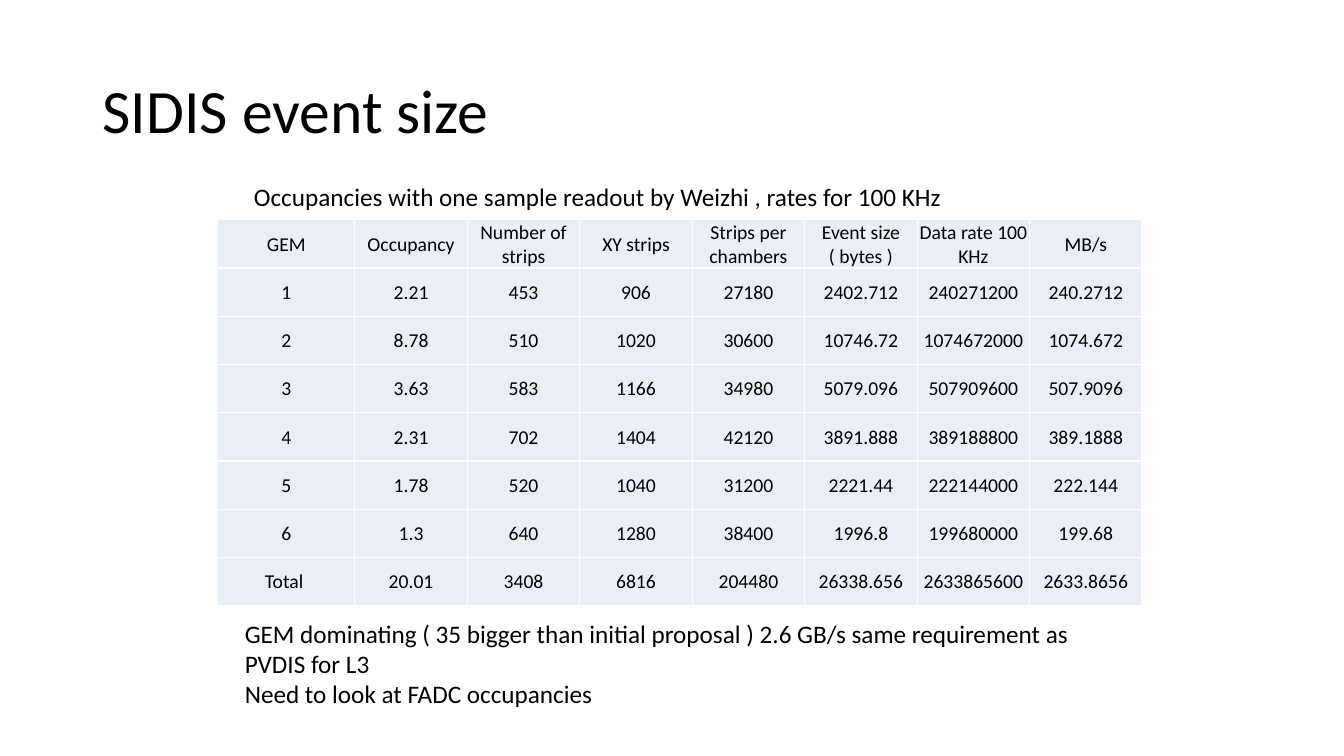
"""Builds the SIDIS event size slide with its GEM occupancy table."""
from lxml import etree
from pptx import Presentation, util as u
from pptx.dml.color import RGBColor
from pptx.enum import text
from pptx.oxml import ns

TITLE = "SIDIS event size"
CAPTION = "Occupancies with one sample readout by Weizhi , rates for 100 KHz"
CONCLUSIONS = [
    "GEM dominating ( 35 bigger than initial proposal ) 2.6 GB/s same requirement as PVDIS for L3",
    "Need to look at FADC occupancies",
]
GEM_ROWS = [
    ("GEM", "Occupancy", "Number of strips", "XY strips", "Strips per chambers",
     "Event size ( bytes )", "Data rate 100 KHz", "MB/s"),
    ("1", "2.21", "453", "906", "27180", "2402.712", "240271200", "240.2712"),
    ("2", "8.78", "510", "1020", "30600", "10746.72", "1074672000", "1074.672"),
    ("3", "3.63", "583", "1166", "34980", "5079.096", "507909600", "507.9096"),
    ("4", "2.31", "702", "1404", "42120", "3891.888", "389188800", "389.1888"),
    ("5", "1.78", "520", "1040", "31200", "2221.44", "222144000", "222.144"),
    ("6", "1.3", "640", "1280", "38400", "1996.8", "199680000", "199.68"),
    ("Total ", "20.01", "3408", "6816", "204480", "26338.656", "2633865600", "2633.8656"),
]

PX = u.Inches(1) // 100
SLIDE_SIZE = (1333, 750)
TITLE_BOX = (92, 40, 1150, 145)
CAPTION_BOX = (242, 175, 704, 40)
CONCLUSIONS_BOX = (233, 608, 900, 101)
TABLE_BOX = (216, 218, 917, 383)
GEM_WIDTH = 136
FONT = "Calibri"
BLACK = RGBColor(0x00, 0x00, 0x00)
WHITE = RGBColor(0xFF, 0xFF, 0xFF)
PALE_BLUE = RGBColor(0xEA, 0xEF, 0xF7)


def scaled(box):
    return [length * PX for length in box]


def style(frame, size, align=text.PP_ALIGN.LEFT):
    for paragraph in frame.paragraphs:
        paragraph.alignment = align
        for run in paragraph.runs:
            run.font.name = FONT
            run.font.size = u.Pt(size)
            run.font.color.rgb = BLACK


def add_text(slide, box, lines, size, wrap=True):
    frame = slide.shapes.add_textbox(*scaled(box)).text_frame
    frame.word_wrap = wrap
    frame.text = "\n".join(lines)
    style(frame, size)
    return frame


def add_borders(cell):
    properties = cell._tc.get_or_add_tcPr()
    for side in ("lnL", "lnR", "lnT", "lnB"):
        border = etree.SubElement(properties, ns.qn(f"a:{side}"), w=str(u.Pt(1)))
        fill = etree.SubElement(border, ns.qn("a:solidFill"))
        etree.SubElement(fill, ns.qn("a:srgbClr"), val=str(WHITE))


def add_gem_table(slide):
    rows, columns = len(GEM_ROWS), len(GEM_ROWS[0])
    left, top, width, height = scaled(TABLE_BOX)
    table = slide.shapes.add_table(rows, columns, left, top, width, height).table
    table.first_row = table.horz_banding = False
    gem_width = GEM_WIDTH * PX
    for index, column in enumerate(table.columns):
        column.width = (width - gem_width) // (columns - 1) if index else gem_width
    for row, values in zip(table.rows, GEM_ROWS):
        row.height = height // rows
        for cell, value in zip(row.cells, values):
            cell.text = value
            cell.margin_left = cell.margin_right = cell.margin_top = PX
            cell.margin_bottom = 0
            cell.vertical_anchor = text.MSO_ANCHOR.MIDDLE
            add_borders(cell)
            cell.fill.solid()
            cell.fill.fore_color.rgb = PALE_BLUE
            style(cell.text_frame, 14, text.PP_ALIGN.CENTER)


def main():
    deck = Presentation()
    deck.slide_width, deck.slide_height = scaled(SLIDE_SIZE)
    slide = deck.slides.add_slide(deck.slide_layouts[6])
    title = add_text(slide, TITLE_BOX, [TITLE], 44)
    title.vertical_anchor = text.MSO_ANCHOR.MIDDLE
    title.paragraphs[0].line_spacing = 0.9
    add_gem_table(slide)
    add_text(slide, CAPTION_BOX, [CAPTION], 18, wrap=False)
    add_text(slide, CONCLUSIONS_BOX, CONCLUSIONS, 18)
    deck.save("out.pptx")


if __name__ == "__main__":
    main()
